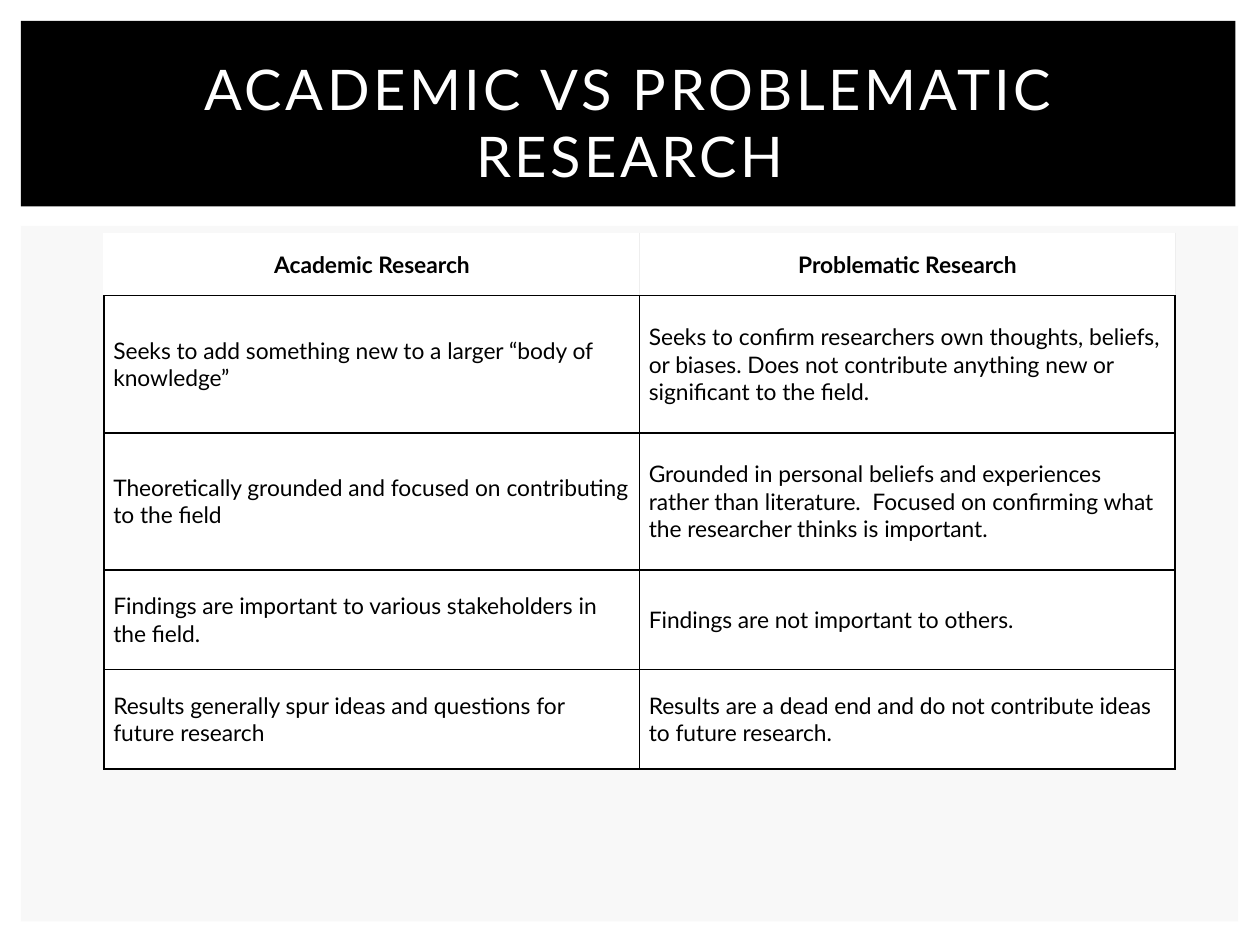
"""Build a slide that compares academic and problematic research in a table."""
from dataclasses import dataclass

from lxml.etree import SubElement
from pptx import Presentation
from pptx.dml.color import RGBColor
from pptx.enum.shapes import MSO_SHAPE
from pptx.enum.text import MSO_ANCHOR, MSO_AUTO_SIZE, PP_ALIGN
from pptx.oxml.ns import qn
from pptx.slide import Slide
from pptx.table import _Cell
from pptx.text.text import _Paragraph
from pptx.util import Pt

FONT = "Lato"
BLACK, WHITE, PALE, DIVIDER = "000000", "FFFFFF", "F8F8F8", "EEEEEE"
CELL_MARGIN = Pt(5.25)
COLUMN_WIDTH = 306


@dataclass(frozen=True)
class Panel:
    left: float
    top: float
    width: float
    height: float
    color: str


@dataclass(frozen=True)
class Comparison:
    academic: str
    problematic: str
    height: float


@dataclass(frozen=True)
class Border:
    side: str
    color: str
    width: float


PANELS = [
    Panel(12, 129, 695.5, 397.5, PALE),
    Panel(12, 12, 694, 106, BLACK),
]
TITLE_BOX = Panel(30, 28, 660, 83, BLACK)
COMPARISONS = [
    Comparison("Academic Research", "Problematic Research", 35.5),
    Comparison(
        "Seeks to add something new to a larger “body of knowledge”",
        "Seeks to confirm researchers own thoughts, beliefs, or biases. "
        "Does not contribute anything new or significant to the field.",
        78.3,
    ),
    Comparison(
        "Theoretically grounded and focused on contributing to the field",
        "Grounded in personal beliefs and experiences rather than literature.  "
        "Focused on confirming what the researcher thinks is important.",
        78.3,
    ),
    Comparison(
        "Findings are important to various stakeholders in the field.",
        "Findings are not important to others.",
        57,
    ),
    Comparison(
        "Results generally spur ideas and questions for future research",
        "Results are a dead end and do not contribute ideas to future research.",
        57,
    ),
]
BODY_BORDERS = [Border(side, BLACK, 1) for side in ("lnL", "lnR", "lnT", "lnB")]
HEADER_BORDERS = [
    [Border("lnR", DIVIDER, 0.75), Border("lnB", BLACK, 1)],
    [Border("lnL", DIVIDER, 0.75), Border("lnR", DIVIDER, 0.75), Border("lnB", BLACK, 1)],
]


def rgb(color: str) -> RGBColor:
    """Turn a hex string into a colour."""
    return RGBColor.from_string(color)


def format_runs(para: _Paragraph, size: float, color: str, bold: bool = False) -> None:
    """Set the font of every run in a paragraph."""
    for span in para.runs:
        span.font.name = FONT
        span.font.size = Pt(size)
        span.font.bold = bold
        span.font.color.rgb = rgb(color)


def add_panel(page: Slide, panel: Panel) -> None:
    """Draw a plain filled rectangle."""
    box = page.shapes.add_shape(
        MSO_SHAPE.RECTANGLE, Pt(panel.left), Pt(panel.top), Pt(panel.width), Pt(panel.height)
    )
    box.shadow.inherit = False
    box.fill.solid()
    box.fill.fore_color.rgb = rgb(panel.color)
    box.line.fill.background()


def fill_title(page: Slide, text: str) -> None:
    """Place and format the title placeholder."""
    title = page.shapes.title
    title.left, title.top = Pt(TITLE_BOX.left), Pt(TITLE_BOX.top)
    title.width, title.height = Pt(TITLE_BOX.width), Pt(TITLE_BOX.height)
    frame = title.text_frame
    frame.text = text
    frame.word_wrap = True
    frame.auto_size = MSO_AUTO_SIZE.NONE
    frame.vertical_anchor = MSO_ANCHOR.MIDDLE
    para = frame.paragraphs[0]
    para.alignment = PP_ALIGN.CENTER
    format_runs(para, 32, WHITE)
    for span in para.runs:
        span.font._element.set("spc", "200")


def add_border(cell: _Cell, border: Border) -> None:
    """Draw one side of a cell."""
    properties = cell._tc.get_or_add_tcPr()
    line = SubElement(properties, qn(f"a:{border.side}"), w=str(Pt(border.width)))
    fill = SubElement(line, qn("a:solidFill"))
    SubElement(fill, qn("a:srgbClr"), val=border.color)


def fill_cell(cell: _Cell, text: str, borders: list[Border], header: bool) -> None:
    """Write and format one table cell."""
    cell.text = text
    cell.vertical_anchor = MSO_ANCHOR.MIDDLE
    cell.margin_left = cell.margin_right = CELL_MARGIN
    cell.margin_top = cell.margin_bottom = CELL_MARGIN
    para = cell.text_frame.paragraphs[0]
    para.alignment = PP_ALIGN.CENTER if header else PP_ALIGN.LEFT
    format_runs(para, 13, BLACK, bold=header)
    for border in borders:
        add_border(cell, border)
    cell.fill.solid()
    cell.fill.fore_color.rgb = rgb(WHITE)


def add_comparison_table(page: Slide, comparisons: list[Comparison]) -> None:
    """Add the two-column table with its header row."""
    height = sum(comparison.height for comparison in comparisons)
    table = page.shapes.add_table(
        len(comparisons), 2, Pt(59.5), Pt(133.5), Pt(2 * COLUMN_WIDTH), Pt(height)
    ).table
    table.first_row = table.horz_banding = False
    for column in table.columns:
        column.width = Pt(COLUMN_WIDTH)
    for row_index, comparison in enumerate(comparisons):
        table.rows[row_index].height = Pt(comparison.height)
        header = row_index == 0
        for column_index, text in enumerate((comparison.academic, comparison.problematic)):
            borders = HEADER_BORDERS[column_index] if header else BODY_BORDERS
            fill_cell(table.cell(row_index, column_index), text, borders, header)


def main() -> None:
    """Build and save the deck."""
    deck = Presentation()
    deck.slide_width, deck.slide_height = Pt(720), Pt(540)
    page = deck.slides.add_slide(deck.slide_layouts[5])
    for panel in PANELS:
        add_panel(page, panel)
    add_comparison_table(page, COMPARISONS)
    fill_title(page, "ACADEMIC VS PROBLEMATIC RESEARCH")
    title_element = page.shapes.title._element
    page.shapes._spTree.append(title_element)
    deck.save("out.pptx")


if __name__ == "__main__":
    main()
